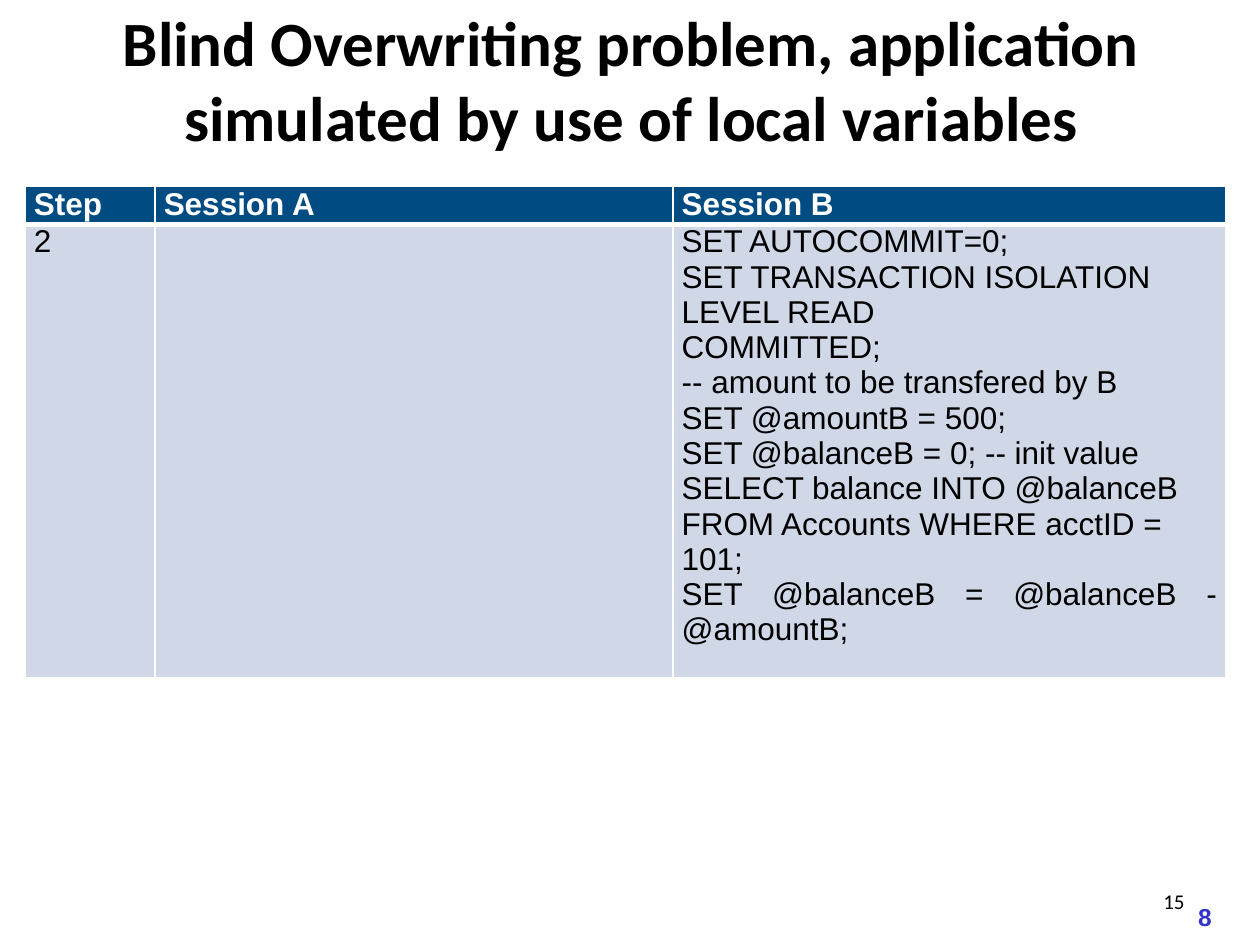
from lxml import etree
from pptx import Presentation
from pptx.dml.color import RGBColor
from pptx.enum.text import MSO_ANCHOR, MSO_AUTO_SIZE, PP_ALIGN
from pptx.oxml.ns import qn
from pptx.util import Inches, Pt

LEFT, CENTER, RIGHT, JUSTIFY = PP_ALIGN.LEFT, PP_ALIGN.CENTER, PP_ALIGN.RIGHT, PP_ALIGN.JUSTIFY
TOP, MIDDLE = MSO_ANCHOR.TOP, MSO_ANCHOR.MIDDLE
FIT_SHAPE, NO_FIT = MSO_AUTO_SIZE.SHAPE_TO_FIT_TEXT, MSO_AUTO_SIZE.NONE
TITLE_ONLY = 5

COLORS = {
    "text": "000000",
    "white": "FFFFFF",
    "header": "004B82",
    "body": "D0D8E8",
    "number": "3333CC",
}

SESSION_B = [
    "SET AUTOCOMMIT=0;",
    "SET TRANSACTION ISOLATION LEVEL READ",
    "COMMITTED;",
    "-- amount to be transfered by B",
    "SET @amountB = 500;",
    "SET @balanceB = 0; -- init value",
    "SELECT balance INTO @balanceB",
    "FROM Accounts WHERE acctID = 101;",
    "SET @balanceB = @balanceB - @amountB;",
]
ROWS = [["Step", "Session A", "Session B"], ["2", "", "\n".join(SESSION_B)]]
COLUMN_WIDTHS = [1.03, 4.11, 4.39]
ROW_HEIGHTS = [0.28, 3.36]


class SlideBuilder:
    def __init__(self, slide):
        self.slide = slide
        self.table_font = "Arial"
        self.heading_font = "Calibri"

    def format_text(self, text_frame, font, size, color, bold=False, align=LEFT):
        for paragraph in text_frame.paragraphs:
            paragraph.alignment = align
            for run in paragraph.runs:
                run.font.name = font
                run.font.size = Pt(size)
                run.font.bold = bold
                run.font.color.rgb = RGBColor.from_string(COLORS[color])

    def title(self, text, left, top, width, height):
        shape = self.slide.shapes.title
        shape.left, shape.top = Inches(left), Inches(top)
        shape.width, shape.height = Inches(width), Inches(height)
        frame = shape.text_frame
        frame.text = text
        frame.auto_size = NO_FIT
        frame.vertical_anchor = MIDDLE
        self.format_text(frame, self.heading_font, 36, "text", True, CENTER)

    def text_box(self, text, left, top, width, height, anchor=TOP, fit=NO_FIT, **style):
        box = self.slide.shapes.add_textbox(
            Inches(left), Inches(top), Inches(width), Inches(height))
        frame = box.text_frame
        frame.text = text
        frame.word_wrap = fit == NO_FIT
        frame.auto_size = fit
        frame.vertical_anchor = anchor
        self.format_text(frame, **style)

    def cell_borders(self, cell, widths):
        """Draw white borders; widths maps a side (L, R, T, B) to points."""
        properties = cell._tc.get_or_add_tcPr()
        for side, width in widths.items():
            line = etree.SubElement(properties, qn(f"a:ln{side}"), w=str(Pt(width)))
            fill = etree.SubElement(line, qn("a:solidFill"))
            etree.SubElement(fill, qn("a:srgbClr"), val=COLORS["white"])

    def table(self, rows, left, top, column_widths, row_heights):
        table = self.slide.shapes.add_table(
            len(rows), len(column_widths), Inches(left), Inches(top),
            Inches(sum(column_widths)), Inches(sum(row_heights))).table
        for column, width in zip(table.columns, column_widths):
            column.width = Inches(width)
        for row, height in zip(table.rows, row_heights):
            row.height = Inches(height)
        for row_index, texts in enumerate(rows):
            is_header = row_index == 0
            borders = {"L": 1, "R": 1, "T": 3 if row_index == 1 else 1, "B": 3 if is_header else 1}
            for column_index, text in enumerate(texts):
                cell = table.cell(row_index, column_index)
                cell.margin_left = cell.margin_right = Inches(0.07)
                cell.margin_top = cell.margin_bottom = 0
                self.cell_borders(cell, borders)
                cell.fill.solid()
                cell.fill.fore_color.rgb = RGBColor.from_string(
                    COLORS["header" if is_header else "body"])
                cell.text_frame.text = text
                self.format_text(cell.text_frame, self.table_font, 18,
                                 "white" if is_header else "text", is_header)
        return table


def main():
    presentation = Presentation()
    presentation.slide_width, presentation.slide_height = Inches(10), Inches(7.5)
    slide = presentation.slides.add_slide(presentation.slide_layouts[TITLE_ONLY])
    builder = SlideBuilder(slide)

    builder.text_box("8", 9.41, 7.11, 0.31, 0.34, fit=FIT_SHAPE,
                     font="Arial", size=14, color="number", bold=True)
    builder.title("Blind Overwriting problem, application simulated by use of local variables",
                  0.51, 0.13, 9, 0.99)
    table = builder.table(ROWS, 0.2, 1.48, COLUMN_WIDTHS, ROW_HEIGHTS)
    for column_index in (0, 2):
        table.cell(1, column_index).text_frame.paragraphs[-1].alignment = JUSTIFY
    builder.text_box("15", 7.17, 6.95, 2.33, 0.4, anchor=MIDDLE,
                     font="Calibri", size=12, color="text", align=RIGHT)

    presentation.save("out.pptx")


if __name__ == "__main__":
    main()
